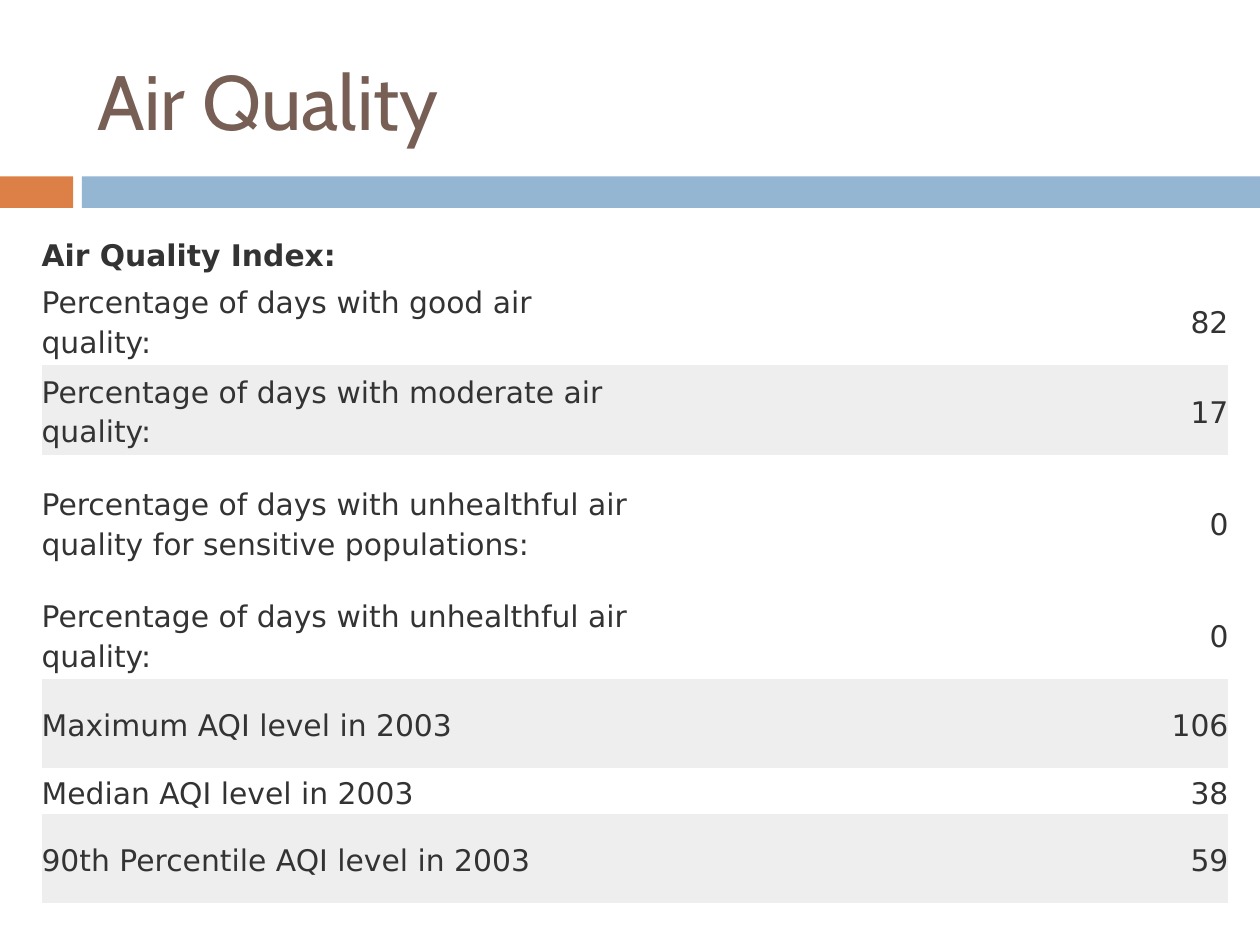
from pptx import Presentation
from pptx.dml.color import RGBColor
from pptx.enum.shapes import MSO_SHAPE
from pptx.enum.text import MSO_ANCHOR, PP_ALIGN
from pptx.util import Inches, Pt

RECTANGLE = MSO_SHAPE.RECTANGLE
MIDDLE = MSO_ANCHOR.MIDDLE
LEFT, RIGHT = PP_ALIGN.LEFT, PP_ALIGN.RIGHT

COLORS = {
    "title": "775F55",
    "accent": "DD8047",
    "band": "94B6D2",
    "text": "333333",
    "shade": "EEEEEE",
}
TITLE_FONT, BODY_FONT = "Cabin", "DejaVu Sans"
NO_STYLE_ID = "{2D5ABB26-0587-4C30-8999-92F81FD0307C}"

TABLE_HEADING = "Air Quality Index:"
HEADING_HEIGHT = 0.36
# Label, value, row height, shaded
AIR_QUALITY_ROWS = [
    ("Percentage of days with good air quality:", "82", 0.71, False),
    ("Percentage of days with moderate air quality:", "17", 0.71, True),
    ("Percentage of days with unhealthful air quality for sensitive populations:",
     "0", 1.07, False),
    ("Percentage of days with unhealthful air quality:", "0", 0.71, False),
    ("Maximum AQI level in 2003", "106", 0.71, True),
    ("Median AQI level in 2003", "38", 0.36, False),
    ("90th Percentile AQI level in 2003", "59", 0.71, True),
]


def color(name):
    return RGBColor.from_string(COLORS[name])


def format_runs(para, font_name, size, color_name, bold=False):
    for span in para.runs:
        span.font.name = font_name
        span.font.size = Pt(size)
        span.font.bold = bold
        span.font.color.rgb = color(color_name)


def place_title(page, left, top, width, height):
    title = page.shapes.title
    title.left, title.top = Inches(left), Inches(top)
    title.width, title.height = Inches(width), Inches(height)
    frame = title.text_frame
    frame.text = "Air Quality"
    frame.vertical_anchor = MIDDLE
    frame.paragraphs[0].alignment = LEFT
    format_runs(frame.paragraphs[0], TITLE_FONT, 44, "title")


def add_divider(page, left, top, width, height):
    accent_width, band_start = 0.58, 0.65
    bars = [
        (left, accent_width, "accent"),
        (left + band_start, width - band_start, "band"),
    ]
    for bar_left, bar_width, fill_name in bars:
        bar = page.shapes.add_shape(
            RECTANGLE, Inches(bar_left), Inches(top),
            Inches(bar_width), Inches(height))
        bar.shadow.inherit = False
        bar.fill.solid()
        bar.fill.fore_color.rgb = color(fill_name)
        bar.line.fill.background()


def fill_cell(cell, text, alignment=LEFT, shaded=False, bold=False):
    cell.margin_left = cell.margin_right = 0
    cell.margin_top = cell.margin_bottom = 0
    cell.vertical_anchor = MIDDLE
    if shaded:
        cell.fill.solid()
        cell.fill.fore_color.rgb = color("shade")
    else:
        cell.fill.background()
    cell.text_frame.text = text
    para = cell.text_frame.paragraphs[0]
    para.alignment = alignment
    para.line_spacing = 1.15
    format_runs(para, BODY_FONT, 17, "text", bold)


def add_air_quality_table(page, left, top, width):
    heights = [HEADING_HEIGHT] + [row[2] for row in AIR_QUALITY_ROWS]
    frame = page.shapes.add_table(
        len(heights), 2, Inches(left), Inches(top),
        Inches(width), Inches(sum(heights)))
    table = frame.table
    table.first_row = table.horz_banding = False
    # Plain table style, without borders
    table._tbl.tblPr[0].text = NO_STYLE_ID

    for column in table.columns:
        column.width = Inches(width / 2)
    for row, height in zip(table.rows, heights):
        row.height = Inches(height)

    heading = table.cell(0, 0)
    heading.merge(table.cell(0, 1))
    fill_cell(heading, TABLE_HEADING, bold=True)
    for index, (label, value, _, shaded) in enumerate(AIR_QUALITY_ROWS, start=1):
        fill_cell(table.cell(index, 0), label, LEFT, shaded)
        fill_cell(table.cell(index, 1), value, RIGHT, shaded)


def main():
    deck = Presentation()
    deck.slide_width, deck.slide_height = Inches(10), Inches(7.5)
    title_only = deck.slide_layouts[5]
    page = deck.slides.add_slide(title_only)

    add_divider(page, 0, 1.4, 10, 0.25)
    place_title(page, 0.67, 0.25, 8.92, 1.08)
    add_air_quality_table(page, 0.33, 1.83, 9.42)

    deck.save("out.pptx")


if __name__ == "__main__":
    main()
